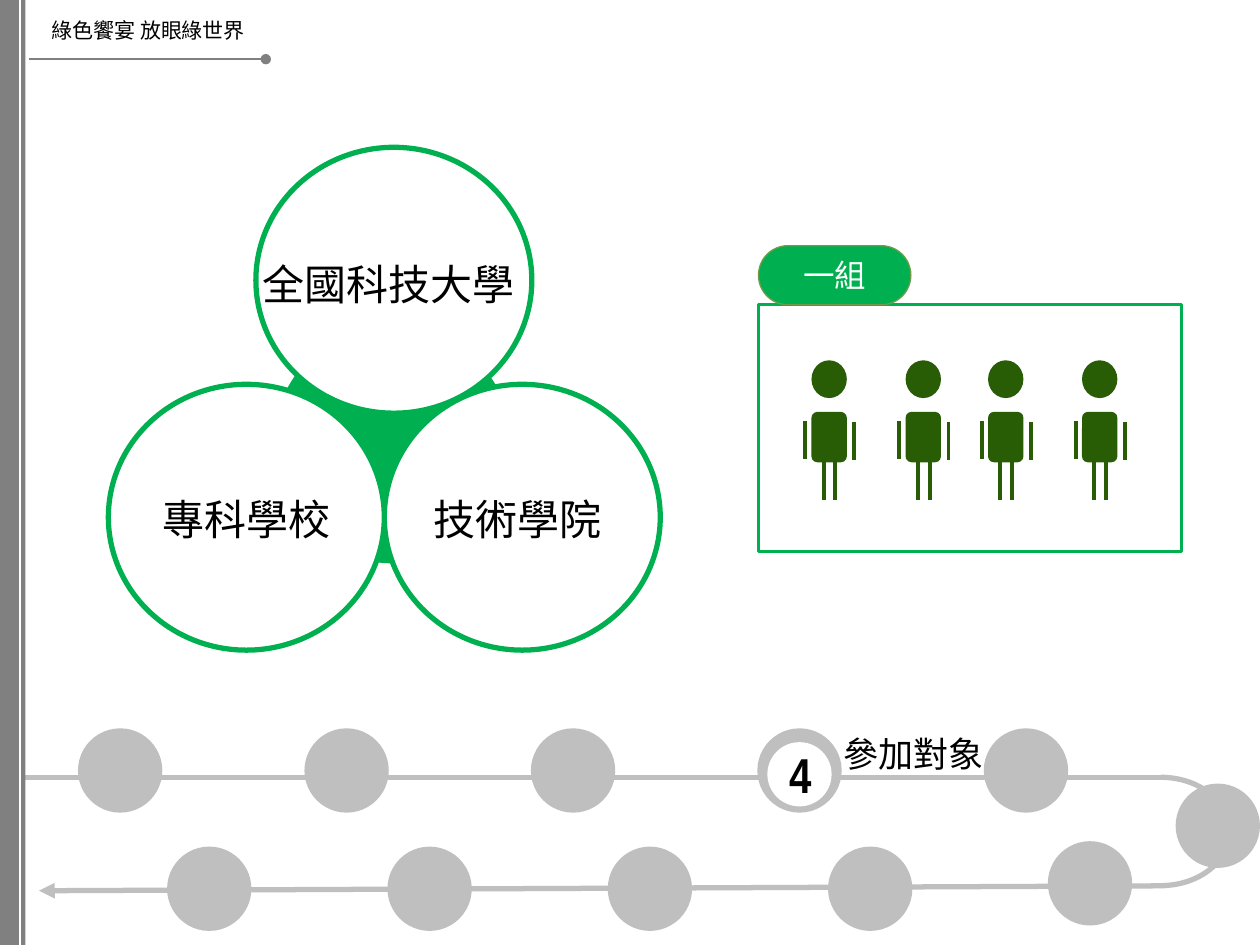
from dataclasses import dataclass
from typing import Any, Optional

from lxml import etree
from pptx import Presentation
from pptx.dml.color import RGBColor
from pptx.enum import shapes, text
from pptx.oxml import ns
from pptx.util import Pt

GREEN = RGBColor(0x00, 0xB0, 0x50)
OLIVE = RGBColor(0x6F, 0x9C, 0x4A)
DARK = RGBColor(0x28, 0x5C, 0x05)
GRAY = RGBColor(0x80, 0x80, 0x80)
SILVER = RGBColor(0xBF, 0xBF, 0xBF)
WHITE = RGBColor(0xFF, 0xFF, 0xFF)
BLACK = RGBColor(0x00, 0x00, 0x00)
SANS = "Noto Sans CJK SC"
KIND = shapes.MSO_SHAPE
MIDDLE = text.MSO_ANCHOR.MIDDLE
CENTER = text.PP_ALIGN.CENTER


@dataclass(frozen=True)
class Box:
    left: float
    top: float
    width: float
    height: float

    def lengths(self) -> list[Pt]:
        return [Pt(v) for v in (self.left, self.top, self.width, self.height)]


@dataclass(frozen=True)
class School:
    name: str
    ring: Box
    label: Box


SCHOOLS = [
    School("全國科技大學", Box(146.2, 84.2, 157.7, 151.9), Box(140.4, 144, 163.4, 36)),
    School("技術學院", Box(219.6, 219.6, 157.7, 151.9), Box(219.6, 278.6, 151.9, 36)),
    School("專科學校", Box(61.9, 219.6, 157.7, 151.9), Box(73.4, 278.6, 135.4, 36)),
]
DOT = 48.2
UPPER = [(44.6 + 129.4 * i, 416.2) for i in range(5)]
LOWER = [(95.5 + 125.9 * i, 483.8) for i in range(4)]
BEND = [(598.8, 480.7), (671.8, 447.8)]
PEOPLE = [463.7, 517.5, 564.6, 618.3]
LIMBS = [(13.7, 264.2), (7, 264.2), (24.5, 241.2), (-3.6, 240.5)]


def add_shape(parent: Any, kind: Any, box: Box, *, fill: Optional[RGBColor] = None,
              line: Optional[RGBColor] = None, weight: float = 1) -> Any:
    item = parent.add_shape(kind, *box.lengths())
    item.shadow.inherit = False
    if fill is None:
        item.fill.background()
    else:
        item.fill.solid()
        item.fill.fore_color.rgb = fill
    if line is None:
        item.line.fill.background()
    else:
        item.line.color.rgb = line
        item.line.width = Pt(weight)
    return item


def add_line(parent: Any, start: tuple[float, float], end: tuple[float, float],
             color: RGBColor, weight: float, *, head: str = "", tail: str = "") -> None:
    item = parent.add_connector(shapes.MSO_CONNECTOR.STRAIGHT,
                                *[Pt(v) for v in (*start, *end)])
    item.line.color.rgb = color
    item.line.width = Pt(weight)
    stroke = item.line._get_or_add_ln()
    for tag, form in (("a:headEnd", head), ("a:tailEnd", tail)):
        if form:
            etree.SubElement(stroke, ns.qn(tag), type=form)
    etree.SubElement(item._element.spPr, ns.qn("a:effectLst"))


def write(item: Any, words: str, *, size: float, font: str = "Arial",
          color: RGBColor = BLACK, bold: bool = False, align: Any = CENTER,
          anchor: Any = MIDDLE, wrap: bool = True, grow: bool = False) -> None:
    frame = item.text_frame
    frame.word_wrap = wrap
    frame.vertical_anchor = anchor
    fit = text.MSO_AUTO_SIZE
    frame.auto_size = fit.SHAPE_TO_FIT_TEXT if grow else fit.NONE
    para = frame.paragraphs[0]
    para.alignment = align
    run = para.add_run()
    run.text = words
    run.font.size = Pt(size)
    run.font.name = font
    run.font.bold = bold
    run.font.color.rgb = color
    etree.SubElement(run.font._element, ns.qn("a:ea"), typeface=SANS)


def add_label(parent: Any, words: str, box: Box, *, size: float,
              align: Any = CENTER) -> None:
    write(parent.add_textbox(*box.lengths()), words, size=size, align=align,
          anchor=text.MSO_ANCHOR.TOP, grow=True)


def add_frame(parent: Any) -> None:
    add_line(parent, (22.3, 509), (665.3, 506.2), SILVER, 3, head="triangle")
    add_line(parent, (0, 444.2), (663.8, 444.2), SILVER, 3)
    add_shape(parent, KIND.RECTANGLE, Box(-4.3, 0, 18.9, 540), fill=GRAY)
    add_line(parent, (11.5, 540), (11.5, 0), WHITE, 1)
    add_line(parent, (16.6, 33.8), (151.9, 33.8), GRAY, 1, tail="oval")
    add_label(parent, "綠色饗宴 放眼綠世界", Box(22.3, 6.5, 140.4, 21.6),
              size=12, align=text.PP_ALIGN.LEFT)
    arc = add_shape(parent, KIND.ARC, Box(624.2, 444.2, 78.5, 61.9),
                    line=SILVER, weight=3)
    arc.adjustments[0] = 162
    arc.adjustments[1] = 52.55
    for left, top in LOWER + BEND + UPPER:
        add_shape(parent, KIND.OVAL, Box(left, top, DOT, DOT), fill=SILVER)


def add_person(parent: Any, left: float) -> None:
    group = parent.add_group_shape().shapes
    add_shape(group, KIND.OVAL, Box(left, 205.9, 20.2, 21.6), fill=DARK)
    add_shape(group, KIND.ROUNDED_RECTANGLE, Box(left, 235.4, 20.2, 28.8), fill=DARK)
    for shift, top in LIMBS:
        add_line(group, (left + shift, top), (left + shift, top + 21.6), DARK, 2.25)


def add_team(parent: Any) -> None:
    group = parent.add_group_shape().shapes
    add_shape(group, KIND.RECTANGLE, Box(433.4, 174.2, 241.9, 141.1),
              line=GREEN, weight=1.5)
    pill = add_shape(group, KIND.ROUNDED_RECTANGLE, Box(433.4, 140.4, 87.1, 33.8),
                     fill=GREEN, line=OLIVE, weight=0.75)
    pill.adjustments[0] = 0.5
    write(pill, "一組", size=18, font=SANS, color=WHITE, wrap=False)
    for left in PEOPLE:
        add_person(group, left)


def add_school(parent: Any, school: School) -> None:
    group = parent.add_group_shape().shapes
    add_shape(group, KIND.OVAL, school.ring, fill=WHITE, line=GREEN, weight=3)
    add_label(group, school.name, school.label, size=24)


def main() -> None:
    deck = Presentation()
    deck.slide_width, deck.slide_height = Pt(720), Pt(540)
    slide = deck.slides.add_slide(deck.slide_layouts[5])
    parent = slide.shapes
    title = parent.title
    title.left, title.top, title.width, title.height = Box(
        455.8, 410.4, 132.5, 40.3).lengths()
    write(title, "參加對象", size=20, font=SANS)
    add_frame(parent)
    add_shape(parent, KIND.OVAL, Box(156.2, 185.8, 136.1, 136.1), fill=GREEN)
    add_team(parent)
    badge = add_shape(parent, KIND.OVAL, Box(438.5, 424.1, 36.7, 36.7), fill=WHITE)
    write(badge, "4", size=28, font="Arial Narrow", bold=True)
    for school in SCHOOLS:
        add_school(parent, school)
    deck.save("out.pptx")


if __name__ == "__main__":
    main()
